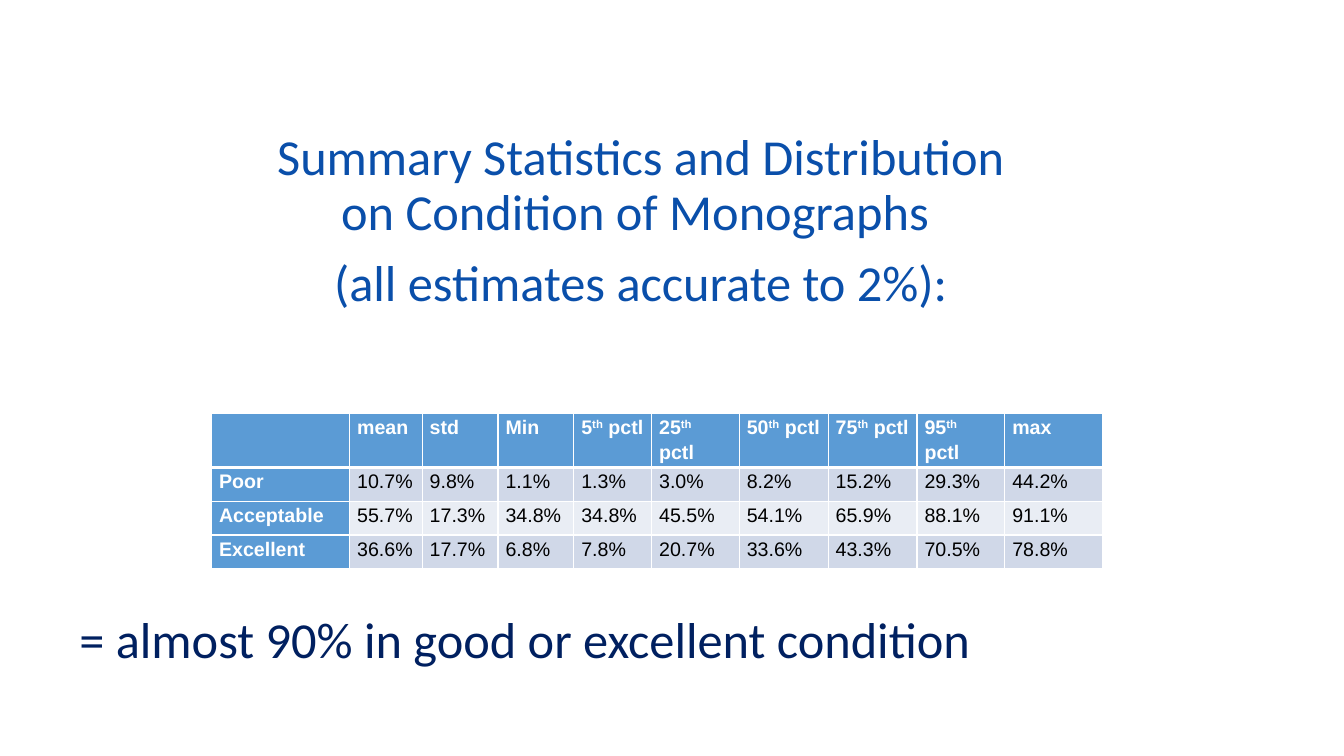
import pptx
import pptx.dml.color
import pptx.enum.text
import pptx.oxml
import pptx.oxml.ns
import pptx.util

Cm = pptx.util.Cm
Pt = pptx.util.Pt

BLUE, NAVY, WHITE, BLACK = "0A4FAA", "002060", "FFFFFF", "000000"
HEADER_FILL = "5B9BD5"
BAND_FILLS = ["D0D8E8", "E9EDF4"]

COLUMN_WIDTHS = [3.48, 1.83, 1.91, 1.91, 1.96, 2.21, 2.24, 2.24, 2.21, 2.46]
ROW_HEIGHTS = [1.37, 0.85, 0.85, 0.85]
CONDITION_ROWS = [
    ["", "mean", "std", "Min", "5th pctl", "25th pctl", "50th pctl", "75th pctl", "95th pctl", "max"],
    ["Poor", "10.7%", "9.8%", "1.1%", "1.3%", "3.0%", "8.2%", "15.2%", "29.3%", "44.2%"],
    ["Acceptable", "55.7%", "17.3%", "34.8%", "34.8%", "45.5%", "54.1%", "65.9%", "88.1%", "91.1%"],
    ["Excellent", "36.6%", "17.7%", "6.8%", "7.8%", "20.7%", "33.6%", "43.3%", "70.5%", "78.8%"],
]


def colour(value):
    return pptx.dml.color.RGBColor.from_string(value)


class PageBuilder:
    """Hold the style and the current slide, and add its elements."""

    def __init__(self, page):
        self.page = page
        self.heading_font = "Calibri"
        self.table_font = "Arial"
        self.heading_size = 36
        self.table_size = 14

    def span(self, para, text, font, size, shade, bold=False, raised=False):
        span = para.add_run()
        span.text = text
        span.font.name = font
        span.font.size = Pt(size)
        span.font.bold = bold
        span.font.color.rgb = colour(shade)
        if raised:
            span._r.get_or_add_rPr().set("baseline", "30000")

    def title(self, lines, left, top, width, height, margin_top):
        box = self.page.shapes.title
        box.left, box.top, box.width, box.height = Cm(left), Cm(top), Cm(width), Cm(height)
        frame = box.text_frame
        frame.word_wrap = True
        frame.auto_size = pptx.enum.text.MSO_AUTO_SIZE.NONE
        frame.vertical_anchor = pptx.enum.text.MSO_ANCHOR.TOP
        frame.margin_top = Cm(margin_top)
        for index, line in enumerate(lines):
            para = frame.add_paragraph() if index else frame.paragraphs[0]
            para.alignment = pptx.enum.text.PP_ALIGN.CENTER
            para.line_spacing = 0.9
            para.space_before = Pt(12 if index else 0)
            self.span(para, line, self.heading_font, self.heading_size, BLUE)

    def label(self, text, left, top, width, height):
        box = self.page.shapes.add_textbox(Cm(left), Cm(top), Cm(width), Cm(height))
        box.text_frame.word_wrap = False
        para = box.text_frame.paragraphs[0]
        self.span(para, text, self.heading_font, self.heading_size, NAVY)

    def borders(self, cell, widths):
        properties = cell._tc.get_or_add_tcPr()
        for side, width in zip("LRTB", widths):
            properties.append(pptx.oxml.parse_xml(
                f'<a:ln{side} {pptx.oxml.ns.nsdecls("a")} w="{Pt(width)}">'
                f'<a:solidFill><a:srgbClr val="{WHITE}"/></a:solidFill></a:ln{side}>'))

    def cell(self, cell, text, row, column):
        heading = row == 0 or column == 0
        cell.margin_left = cell.margin_right = Cm(0.19)
        cell.margin_top = cell.margin_bottom = 0
        self.borders(cell, [1, 1, 3 if row == 1 else 1, 3 if row == 0 else 1])
        cell.fill.solid()
        cell.fill.fore_color.rgb = colour(HEADER_FILL if heading else BAND_FILLS[(row - 1) % 2])
        para = cell.text_frame.paragraphs[0]
        para.line_spacing = 1.15
        for part in text.partition("th") if "pctl" in text else [text]:
            if part:
                self.span(para, part, self.table_font, self.table_size,
                          WHITE if heading else BLACK, heading, part == "th")

    def table(self, rows, left, top):
        table = self.page.shapes.add_table(
            len(rows), len(COLUMN_WIDTHS), Cm(left), Cm(top),
            Cm(sum(COLUMN_WIDTHS)), Cm(sum(ROW_HEIGHTS))).table
        table.first_col = True
        for column, width in zip(table.columns, COLUMN_WIDTHS):
            column.width = Cm(width)
        for table_row, height in zip(table.rows, ROW_HEIGHTS):
            table_row.height = Cm(height)
        for row, texts in enumerate(rows):
            for column, text in enumerate(texts):
                self.cell(table.cell(row, column), text, row, column)


def main():
    deck = pptx.Presentation()
    deck.slide_width, deck.slide_height = Cm(33.87), Cm(19.05)
    builder = PageBuilder(deck.slides.add_slide(deck.slide_layouts.get_by_name("Title Only")))
    builder.title(
        ["Summary Statistics and Distribution on Condition of Monographs ",
         "(all estimates accurate to 2%):"],
        5.99, 1.73, 20.32, 10.59, 1.6)
    builder.table(CONDITION_ROWS, 5.33, 10.41)
    builder.label("= almost 90% in good or excellent condition", 1.75, 15.21, 23.88, 1.8)
    deck.save("out.pptx")


if __name__ == "__main__":
    main()
